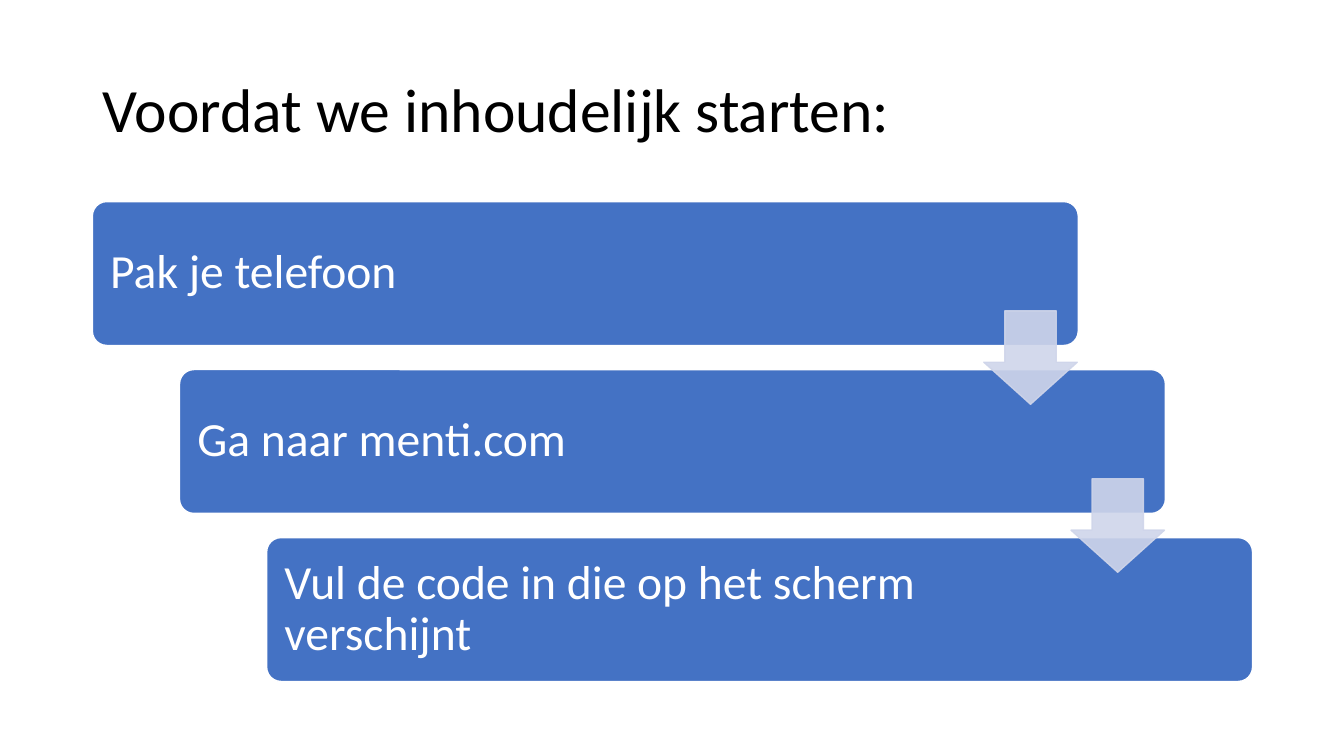
from dataclasses import dataclass

from lxml.etree import SubElement
from pptx import Presentation
from pptx.dml.color import RGBColor
from pptx.enum.shapes import MSO_SHAPE
from pptx.enum.text import MSO_ANCHOR, PP_ALIGN
from pptx.oxml.ns import qn
from pptx.shapes.autoshape import Shape
from pptx.slide import Slide
from pptx.text.text import TextFrame
from pptx.util import Emu, Pt

EMU_PER_PX = 9525


@dataclass(frozen=True)
class Theme:
    font: str = "Calibri"
    title_size: int = 44
    step_size: int = 34
    title_color: str = "000000"
    step_text: str = "FFFFFF"
    step_fill: str = "4472C4"
    step_line: str = "FFFFFF"
    arrow: str = "CFD5EA"
    arrow_alpha: int = 90


@dataclass(frozen=True)
class Box:
    left: int
    top: int
    width: int
    height: int

    def moved(self, count: int) -> "Box":
        return Box(self.left + count * STEP_RIGHT, self.top + count * STEP_DOWN,
                   self.width, self.height)

    def emu(self) -> tuple[Emu, ...]:
        return tuple(px(n) for n in (self.left, self.top, self.width, self.height))


THEME = Theme()
STEP_RIGHT, STEP_DOWN = 83, 160
TITLE_BOX = Box(88, 38, 1104, 139)
FIRST_STEP = Box(88, 192, 939, 137)
FIRST_ARROW = Box(937, 296, 89, 89)
STEPS = (
    "Pak je telefoon",
    "Ga naar menti.com",
    "Vul de code in die op het scherm verschijnt",
)


def px(length: int) -> Emu:
    return Emu(length * EMU_PER_PX)


def write(frame: TextFrame, text: str, size: int, color: str) -> None:
    frame.text = text
    frame.word_wrap = True
    frame.vertical_anchor = MSO_ANCHOR.MIDDLE
    paragraph = frame.paragraphs[0]
    paragraph.alignment = PP_ALIGN.LEFT
    paragraph.line_spacing = 0.9
    font = paragraph.runs[0].font
    font.name = THEME.font
    font.size = Pt(size)
    font.color.rgb = RGBColor.from_string(color)


def add_block(slide: Slide, kind: MSO_SHAPE, box: Box, fill: str, line: str,
              adjustments: tuple[float, ...]) -> Shape:
    block = slide.shapes.add_shape(kind, *box.emu())
    block.shadow.inherit = False
    block.fill.solid()
    block.fill.fore_color.rgb = RGBColor.from_string(fill)
    block.line.color.rgb = RGBColor.from_string(line)
    block.line.width = Pt(1)
    for index, value in enumerate(adjustments):
        block.adjustments[index] = value
    return block


def add_step(slide: Slide, text: str, box: Box) -> None:
    step = add_block(slide, MSO_SHAPE.ROUNDED_RECTANGLE, box,
                     THEME.step_fill, THEME.step_line, (0.1,))
    frame = step.text_frame
    frame.margin_left = frame.margin_top = frame.margin_bottom = px(13)
    frame.margin_right = px(186)
    write(frame, text, THEME.step_size, THEME.step_text)


def add_arrow(slide: Slide, box: Box) -> None:
    arrow = add_block(slide, MSO_SHAPE.DOWN_ARROW, box,
                      THEME.arrow, THEME.arrow, (0.55, 0.45))
    for color in arrow.element.spPr.iter(qn("a:srgbClr")):
        SubElement(color, qn("a:alpha")).set("val", str(THEME.arrow_alpha * 1000))


def main() -> None:
    deck = Presentation()
    deck.slide_width, deck.slide_height = px(1280), px(720)
    slide = deck.slides.add_slide(deck.slide_layouts.get_by_name("Title Only"))

    title = slide.shapes.title
    title.left, title.top, title.width, title.height = TITLE_BOX.emu()
    write(title.text_frame, "Voordat we inhoudelijk starten:",
          THEME.title_size, THEME.title_color)

    for index, text in enumerate(STEPS):
        add_step(slide, text, FIRST_STEP.moved(index))
    for index in range(len(STEPS) - 1):
        add_arrow(slide, FIRST_ARROW.moved(index))

    deck.save("out.pptx")


if __name__ == "__main__":
    main()
